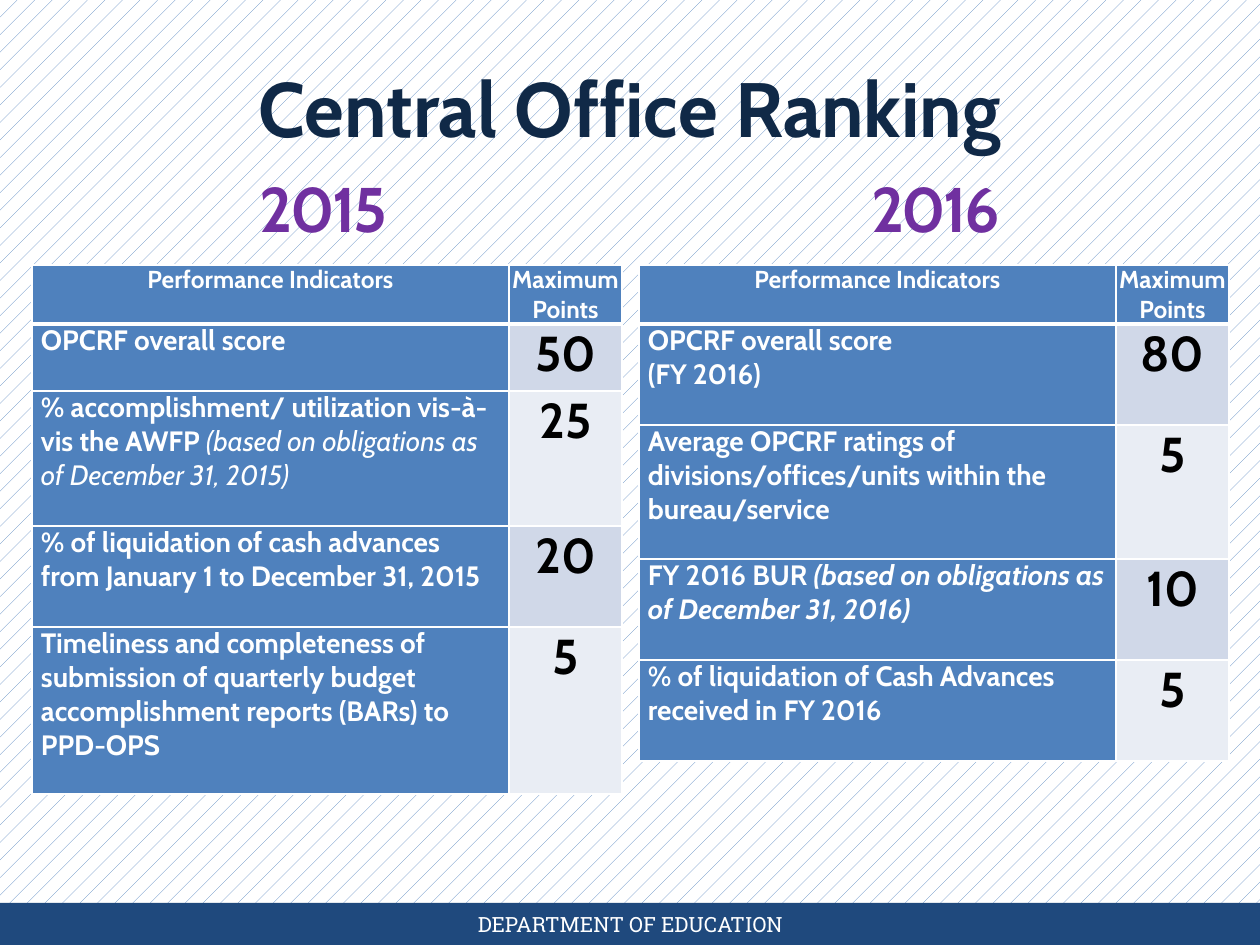
from lxml import etree
from pptx import Presentation
from pptx.dml.color import RGBColor
from pptx.enum.dml import MSO_PATTERN
from pptx.enum.shapes import MSO_SHAPE
from pptx.enum.text import MSO_ANCHOR, MSO_AUTO_SIZE, PP_ALIGN
from pptx.oxml.ns import qn
from pptx.util import Pt

EMU_PER_PX = 914400 // 126
LEFT, CENTER = PP_ALIGN.LEFT, PP_ALIGN.CENTER
TOP, MIDDLE = MSO_ANCHOR.TOP, MSO_ANCHOR.MIDDLE
GROW = MSO_AUTO_SIZE.SHAPE_TO_FIT_TEXT
RECT, DOTS = MSO_SHAPE.RECTANGLE, MSO_PATTERN.PERCENT_5

COLORS = {
    "white": "FFFFFF", "black": "000000", "blue": "4F81BD", "navy": "1F497D",
    "title": "102947", "purple": "7030A0", "band1": "D0D8E8", "band2": "E9EDF4",
}

# Text formats: font attributes, with the colour named
FORMATS = {
    "title": dict(name="Cabin", size=Pt(44), bold=True, color="title"),
    "year": dict(name="Cabin", size=Pt(36), bold=True, color="purple"),
    "footer": dict(name="Roboto Slab", size=Pt(12), bold=False, color="white"),
    "head": dict(name="Cabin", size=Pt(14), bold=True, color="white"),
    "item": dict(name="Cabin", size=Pt(16), bold=True, color="white"),
    "note": dict(name="Cabin", size=Pt(16), bold=False, italic=True, color="white"),
    "boldnote": dict(name="Cabin", size=Pt(16), bold=True, italic=True, color="white"),
    "points": dict(name="Cabin", size=Pt(28), bold=True, color="black"),
}

TABLE_TOP, HEAD_HEIGHT = 265, 59
COLUMNS = (477, 113)
HEADINGS = ("Performance Indicators", "Maximum Points")

# Per year: year box left, table left, rows of (height, paragraphs of runs, points)
RANKINGS = {
    "2015": (210, 32, [
        (67, [[("OPCRF overall score", "item")]], "50"),
        (135, [[("% accomplishment/ utilization vis-à-vis the AWFP ", "item"),
                ("(based on obligations as of December 31, 2015)", "note")]], "25"),
        (101, [[("% of liquidation of cash advances from January 1 to "
                 "December 31, 2015", "item")]], "20"),
        (167, [[("Timeliness and completeness of submission of quarterly budget "
                 "accomplishment reports (BARs) to PPD-OPS", "item")]], "5"),
    ]),
    "2016": (822, 639, [
        (101, [[("OPCRF overall score", "item")], [("(FY 2016)", "item")]], "80"),
        (134, [[("Average OPCRF ratings of divisions/offices/units within the "
                 "bureau/service", "item")]], "5"),
        (101, [[("FY 2016 BUR ", "item"),
                ("(based on obligations as of December 31, 2016)", "boldnote")]], "10"),
        (101, [[("% of liquidation of Cash Advances received in FY 2016", "item")]], "5"),
    ]),
}


def px(n):
    return n * EMU_PER_PX


def rgb(name):
    return RGBColor.from_string(COLORS[name])


def write(tf, paragraphs, align):
    """Fill a text frame with paragraphs of (text, format) runs."""
    for i, runs in enumerate(paragraphs):
        p = tf.add_paragraph() if i else tf.paragraphs[0]
        p.alignment = align
        for text, style in runs:
            r = p.add_run()
            r.text = text
            for key, value in FORMATS[style].items():
                if key == "color":
                    r.font.color.rgb = rgb(value)
                else:
                    setattr(r.font, key, value)


def add_text(s, box, text, style, anchor=TOP):
    sp = s.shapes.add_textbox(*map(px, box))
    tf = sp.text_frame
    tf.word_wrap = True
    tf.vertical_anchor = anchor
    write(tf, [[(text, style)]], CENTER)
    return tf


def add_title(s, text):
    sp = s.shapes.title
    sp.left, sp.top, sp.width, sp.height = map(px, (0, 54, 1260, 106))
    tf = sp.text_frame
    tf.vertical_anchor = TOP
    tf.auto_size = GROW
    write(tf, [[(text, "title")]], CENTER)


def add_year(s, left, year):
    tf = add_text(s, (left, 178, 227, 74), year, "year")
    tf.auto_size = GROW
    p = tf.paragraphs[0]
    p.line_spacing = 0.8
    p.runs[0].font._element.set("spc", "-150")


def add_footer(s):
    bar = s.shapes.add_shape(RECT, *map(px, (0, 903, 1260, 42)))
    bar.shadow.inherit = False
    bar.fill.solid()
    bar.fill.fore_color.rgb = rgb("navy")
    bar.line.fill.background()
    add_text(s, (431, 903, 399, 42), "DEPARTMENT OF EDUCATION", "footer", MIDDLE)


def set_borders(cell, bottom):
    tcPr = cell._tc.get_or_add_tcPr()
    widths = {"lnL": 1, "lnR": 1, "lnT": 1, "lnB": bottom}
    for i, (tag, width) in enumerate(widths.items()):
        ln = etree.Element(qn("a:" + tag), w=str(Pt(width)))
        fill = etree.SubElement(ln, qn("a:solidFill"))
        etree.SubElement(fill, qn("a:srgbClr"), val=COLORS["white"])
        tcPr.insert(i, ln)


def fill_cell(cell, paragraphs, align, fill, margin=9, bottom=1):
    cell.margin_left = cell.margin_right = px(margin)
    cell.margin_top = cell.margin_bottom = 0
    cell.fill.solid()
    cell.fill.fore_color.rgb = rgb(fill)
    set_borders(cell, bottom)
    write(cell.text_frame, paragraphs, align)


def add_ranking(s, left, rows):
    heights = [HEAD_HEIGHT] + [row[0] for row in rows]
    box = (left, TABLE_TOP, sum(COLUMNS), sum(heights))
    table = s.shapes.add_table(len(heights), len(COLUMNS), *map(px, box)).table
    table.horz_banding = False
    for column, width in zip(table.columns, COLUMNS):
        column.width = px(width)
    for row, height in zip(table.rows, heights):
        row.height = px(height)

    for c, text in enumerate(HEADINGS):
        fill_cell(table.cell(0, c), [[(text, "head")]], CENTER, "blue", 3, 3)
    for i, (_, indicator, points) in enumerate(rows, 1):
        band = "band1" if i % 2 else "band2"
        fill_cell(table.cell(i, 0), indicator, LEFT, "blue")
        fill_cell(table.cell(i, 1), [[(points, "points")]], CENTER, band)


def main():
    prs = Presentation()
    prs.slide_width, prs.slide_height = px(1260), px(945)
    s = prs.slides.add_slide(prs.slide_layouts[5])

    # Patterned background
    fill = s.background.fill
    fill.patterned()
    fill.pattern = DOTS
    fill.fore_color.rgb = rgb("blue")
    fill.back_color.rgb = rgb("white")

    add_footer(s)
    add_title(s, "Central Office Ranking")
    for year, (year_left, table_left, rows) in RANKINGS.items():
        add_year(s, year_left, year)
        add_ranking(s, table_left, rows)

    prs.save("out.pptx")


if __name__ == "__main__":
    main()
